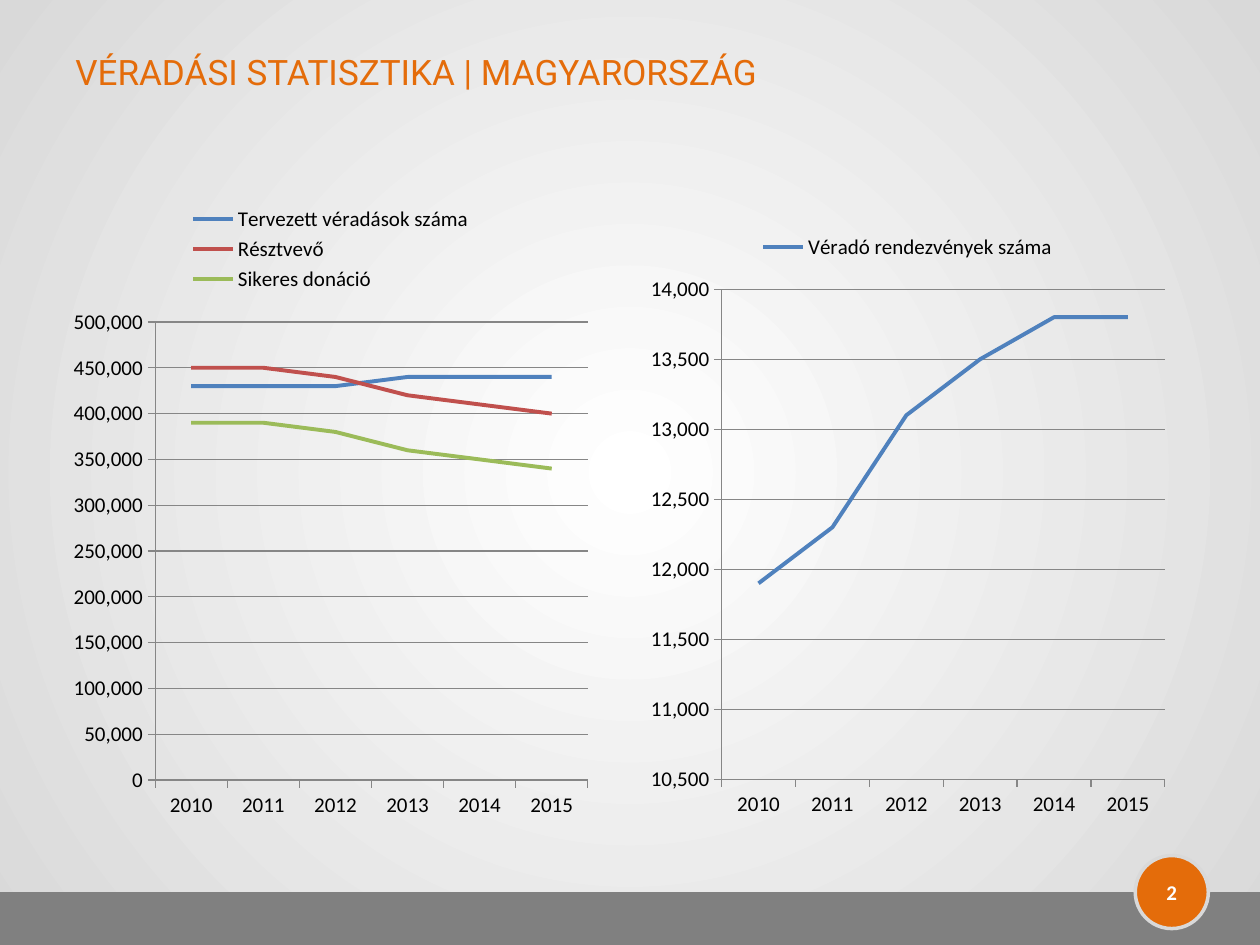
from lxml import etree
from pptx import Presentation
from pptx.chart.data import CategoryChartData
from pptx.dml.color import RGBColor
from pptx.enum.chart import XL_CHART_TYPE, XL_LEGEND_POSITION, XL_MARKER_STYLE, XL_TICK_MARK
from pptx.enum.shapes import MSO_SHAPE
from pptx.enum.text import MSO_ANCHOR, PP_ALIGN
from pptx.oxml.ns import qn
from pptx.util import Inches, Pt

LINE_CHART = XL_CHART_TYPE.LINE
LEGEND_TOP = XL_LEGEND_POSITION.TOP
NO_MARKER = XL_MARKER_STYLE.NONE
TICK_OUTSIDE = XL_TICK_MARK.OUTSIDE
RECTANGLE, OVAL = MSO_SHAPE.RECTANGLE, MSO_SHAPE.OVAL
MIDDLE = MSO_ANCHOR.MIDDLE
LEFT, CENTER = PP_ALIGN.LEFT, PP_ALIGN.CENTER

WHITE = RGBColor(0xFF, 0xFF, 0xFF)
BLACK = RGBColor(0x00, 0x00, 0x00)
LIGHT_GRAY = RGBColor(0xD9, 0xD9, 0xD9)
AXIS_GRAY = RGBColor(0x86, 0x86, 0x86)
FOOTER_GRAY = RGBColor(0x80, 0x80, 0x80)
ORANGE = RGBColor(0xE4, 0x6C, 0x0A)
BLUE = RGBColor(0x4F, 0x81, 0xBD)
RED = RGBColor(0xC0, 0x50, 0x4D)
GREEN = RGBColor(0x9B, 0xBB, 0x59)

YEARS = ["2010", "2011", "2012", "2013", "2014", "2015"]
CHARTS = [
    {
        "box": (0.5, 1.53, 4.25, 5.06),
        "scale": {"minimum_scale": 0, "maximum_scale": 500000, "major_unit": 50000},
        "series": [
            ("Tervezett véradások száma", BLUE, [430000, 430000, 430000, 440000, 440000, 440000]),
            ("Résztvevő", RED, [450000, 450000, 440000, 420000, 410000, 400000]),
            ("Sikeres donáció", GREEN, [390000, 390000, 380000, 360000, 350000, 340000]),
        ],
    },
    {
        "box": (5.08, 1.75, 4.25, 4.83),
        "scale": {"minimum_scale": 10500, "maximum_scale": 14000, "major_unit": 500},
        "series": [
            ("Véradó rendezvények száma", BLUE, [11900, 12300, 13100, 13500, 13800, 13800]),
        ],
    },
]
SHAPES = [
    (RECTANGLE, (0, 7.08, 10, 0.42), FOOTER_GRAY, None),
    (OVAL, (9.01, 6.79, 0.58, 0.58), ORANGE, LIGHT_GRAY),
]
TEXTS = [
    ("VÉRADÁSI STATISZTIKA | MAGYARORSZÁG", (0.5, 0.3, 9, 0.53), LEFT,
     {"name": "Roboto", "size": Pt(20), "bold": False}, ORANGE),
    ("2", (9.01, 6.88, 0.58, 0.4), CENTER,
     {"name": "Calibri", "size": Pt(12), "bold": True}, WHITE),
]


def set_all(target, values):
    for name, value in values.items():
        setattr(target, name, value)


def set_line(line, color, width):
    line.color.rgb = color
    line.width = Pt(width)


def set_background(slide):
    fill = slide.background.fill
    fill.gradient()
    for stop, color in zip(fill.gradient_stops, (WHITE, LIGHT_GRAY)):
        stop.color.rgb = color
    gradient = slide.element.find(".//" + qn("a:gradFill"))
    linear = gradient.find(qn("a:lin"))
    circle = etree.Element(qn("a:path"), {"path": "circle"})
    etree.SubElement(circle, qn("a:fillToRect"), dict.fromkeys("ltrb", "50000"))
    gradient.replace(linear, circle)


def add_filled_shape(slide, kind, box, color, outline):
    shape = slide.shapes.add_shape(kind, *map(Inches, box))
    shape.shadow.inherit = False
    shape.fill.solid()
    shape.fill.fore_color.rgb = color
    if outline is None:
        shape.line.fill.background()
    else:
        set_line(shape.line, outline, 2)


def add_text(slide, text, box, alignment, font, color):
    frame = slide.shapes.add_textbox(*map(Inches, box)).text_frame
    set_all(frame, {"word_wrap": True, "vertical_anchor": MIDDLE})
    paragraph = frame.paragraphs[0]
    paragraph.alignment = alignment
    run = paragraph.add_run()
    run.text = text
    set_all(run.font, font)
    run.font.color.rgb = color


def add_line_chart(slide, box, scale, series):
    data = CategoryChartData(number_format="#,##0")
    data.categories = YEARS
    for name, _, values in series:
        data.add_series(name, values)
    chart = slide.shapes.add_chart(LINE_CHART, *map(Inches, box), data).chart
    set_all(chart, {"has_title": False, "has_legend": True})
    set_all(chart.font, {"name": "Calibri", "size": Pt(12)})
    chart.font.color.rgb = BLACK
    set_all(chart.legend, {"position": LEGEND_TOP, "include_in_layout": False})

    value_axis = chart.value_axis
    set_all(value_axis, scale)
    value_axis.has_major_gridlines = True
    set_all(value_axis.tick_labels, {"number_format": "#,##0", "number_format_is_linked": False})
    for axis in (chart.category_axis, value_axis):
        axis.major_tick_mark = TICK_OUTSIDE
        set_line(axis.format.line, AXIS_GRAY, 0.75)
    set_line(value_axis.major_gridlines.format.line, AXIS_GRAY, 0.75)

    plot = chart.plots[0]
    plot.vary_by_categories = False
    for plotted, (_, color, _) in zip(plot.series, series):
        plotted.smooth = False
        plotted.marker.style = NO_MARKER
        set_line(plotted.format.line, color, 2.25)


def main():
    presentation = Presentation()
    set_all(presentation, {"slide_width": Inches(10), "slide_height": Inches(7.5)})
    slide = presentation.slides.add_slide(presentation.slide_layouts[6])
    set_background(slide)
    for item in SHAPES:
        add_filled_shape(slide, *item)
    for item in TEXTS:
        add_text(slide, *item)
    for item in CHARTS:
        add_line_chart(slide, **item)
    presentation.save("out.pptx")


if __name__ == "__main__":
    main()
